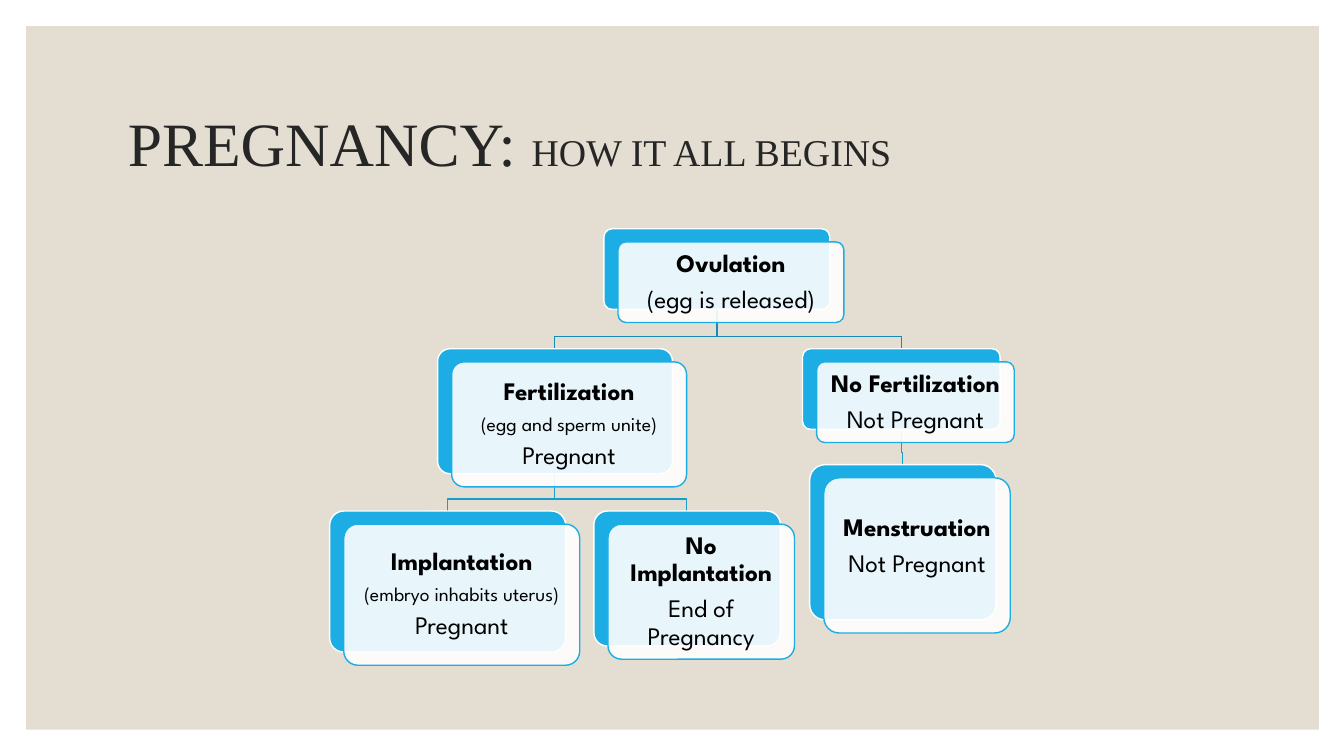
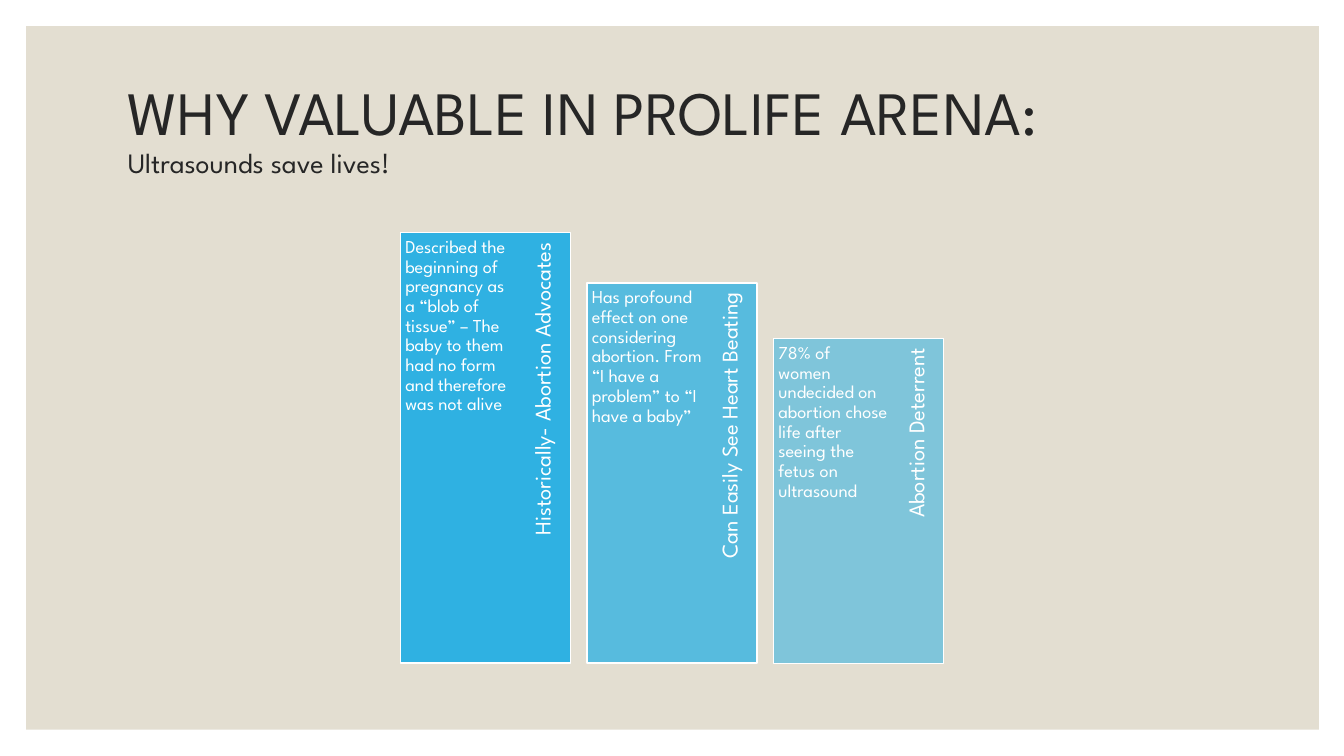
from dataclasses import dataclass

from lxml import etree
from pptx import Presentation
from pptx.dml.color import RGBColor
from pptx.enum.shapes import MSO_SHAPE
from pptx.enum.text import MSO_ANCHOR, PP_ALIGN
from pptx.oxml.ns import qn
from pptx.util import Pt

SCALE = 9144  # EMU in one px, 100 px to the inch
RECT, ROUND = MSO_SHAPE.RECTANGLE, MSO_SHAPE.ROUNDED_RECTANGLE
TOP, MIDDLE = MSO_ANCHOR.TOP, MSO_ANCHOR.MIDDLE
LEFT, CENTER, RIGHT = PP_ALIGN.LEFT, PP_ALIGN.CENTER, PP_ALIGN.RIGHT


@dataclass(frozen=True)
class Theme:
    sand: str = "E3DED1"
    ink: str = "262626"
    black: str = "000000"
    white: str = "FFFFFF"
    blue: str = "1CADE4"
    upper: str = "168BB7"
    lower: str = "199DCF"
    sans: str = "League Spartan"
    serif: str = "Times New Roman"
    title: int = 44
    sub: int = 27
    tag: int = 20
    head: int = 18
    label: int = 16
    note: int = 14
    body: int = 13


T = Theme()

# name: left, top, width, height, lines of (text, size, bold)
CARDS = {
    "ovulation": (599, 227, 224, 80, [
        ("Ovulation", T.head, True),
        ("(egg is released)", T.head, False)]),
    "fertile": (434, 346, 233, 124, [
        ("Fertilization", T.head, True),
        ("(egg and sperm unite)", T.note, False),
        ("Pregnant", T.head, False)]),
    "implant": (327, 507, 234, 140, [
        ("Implantation", T.head, True),
        ("(embryo inhabits uterus)", T.note, False),
        ("Pregnant", T.head, False)]),
    "failed": (589, 507, 185, 134, [
        ("No Implantation", T.head, True),
        ("End of Pregnancy", T.head, False)]),
    "barren": (796, 346, 196, 80, [
        ("No Fertilization", T.head, True),
        ("Not Pregnant", T.head, False)]),
    "menses": (803, 461, 185, 154, [
        ("Menstruation", T.head, True),
        ("Not Pregnant", T.head, False)]),
}
INSETS = {"menses": (3, 3, 3, 21)}
LINKS = [
    ("barren", "menses", T.lower),
    ("ovulation", "barren", T.upper),
    ("fertile", "failed", T.lower),
    ("fertile", "implant", T.lower),
    ("ovulation", "fertile", T.upper),
]

# top, opacity in percent, label, body
BARS = [
    (231, 90, "Historically- Abortion Advocates",
     "Described the beginning of pregnancy as a “blob of tissue” – "
     "The baby to them had no form and therefore was not alive"),
    (281, 70, "Can Easily See Heart Beating",
     "Has profound effect on one considering abortion. "
     "From “I have a problem” to “I have a baby”"),
    (336, 50, "Abortion Deterrent",
     "78% of\vwomen undecided on abortion chose life after "
     "seeing the fetus on ultrasound"),
]


def px(*values):
    return [value * SCALE for value in values]


def rgb(code):
    return RGBColor.from_string(code)


def shape(slide, kind, box, fill, line=None, alpha=100):
    item = slide.shapes.add_shape(kind, *px(*box))
    item.shadow.inherit = False
    item.fill.solid()
    item.fill.fore_color.rgb = rgb(fill)
    if alpha < 100:
        color = item.fill._xPr.find(qn("a:solidFill"))[0]
        etree.SubElement(color, qn("a:alpha")).set("val", str(alpha * 1000))
    if line:
        item.line.color.rgb = rgb(line)
        item.line.width = Pt(1)
    else:
        item.line.fill.background()
    if kind == ROUND:
        item.adjustments[0] = 0.1
    return item


def frame(item, insets, anchor):
    """Set the wrap, anchor and insets (left, top, right, bottom) of a text."""
    text = item.text_frame
    text.word_wrap = True
    text.vertical_anchor = anchor
    (text.margin_left, text.margin_top,
     text.margin_right, text.margin_bottom) = px(*insets)
    return text


def write(text, lines, color, align, face=T.sans, gap=0.35):
    """Fill a frame with lines of (text, size, bold); gap is a share of size."""
    for i, (words, size, bold) in enumerate(lines):
        para = text.add_paragraph() if i else text.paragraphs[0]
        para.text = words
        para.alignment = align
        para.line_spacing = 0.9
        para.space_after = Pt(size * gap)
        font = para.font
        font.name, font.size, font.bold = face, Pt(size), bold
        font.color.rgb = rgb(color)


def base(deck):
    slide = deck.slides.add_slide(deck.slide_layouts[6])
    shape(slide, RECT, (26, 26, 1282, 698), T.sand)
    return slide


def title(slide, lines, face=T.sans, foot=5):
    item = slide.shapes.add_textbox(*px(117, 70, 1100, 150))
    text = frame(item, (10, 5, 10, foot), MIDDLE)
    write(text, lines, T.ink, LEFT, face, 0)
    return text


def link(slide, start, end, color):
    """Draw an elbow from the foot of one card to the top of another."""
    left, top, width, height, _ = CARDS[start]
    x, y = left + width // 2, top + height
    left, top, width, _, _ = CARDS[end]
    goal, bend = left + width // 2, top - 12
    pen = slide.shapes.build_freeform(x, y, scale=SCALE)
    pen.add_line_segments([(x, bend), (goal, bend), (goal, top)], close=False)
    item = pen.convert_to_shape()
    item.shadow.inherit = False
    item.fill.background()
    item.line.color.rgb = rgb(color)
    item.line.width = Pt(1)


def card(slide, name):
    left, top, width, height, lines = CARDS[name]
    shape(slide, ROUND, (left, top, width, height), T.blue, T.white)
    front = shape(slide, ROUND, (left + 14, top + 13, width, height),
                  T.white, T.blue, 90)
    text = frame(front, INSETS.get(name, (7, 7, 7, 7)), MIDDLE)
    write(text, lines, T.black, CENTER)


def bar(slide, left, top, alpha, label, body):
    width, height = 169, 658 - top
    item = shape(slide, RECT, (left, top, width, height),
                 T.blue, T.white, alpha)
    write(frame(item, (5, 5, 54, 5), TOP),
          [(body, T.body, False)], T.white, LEFT)

    # The label turns about its centre, so its long side runs down the bar.
    long, thick = height * 9 // 10, 44
    x, y = left + 143 - long // 2, top + (long - thick) // 2
    side = slide.shapes.add_textbox(*px(x, y, long, thick))
    side.rotation = 270
    write(frame(side, (7, 0, 10, 2), MIDDLE),
          [(label, T.label, False)], T.white, RIGHT)


def begin(deck):
    slide = base(deck)
    text = title(slide, [("PREGNANCY: ", T.title, False)], T.serif)
    run = text.paragraphs[0].add_run()
    run.text = "HOW IT ALL BEGINS"
    run.font.size = Pt(T.sub)
    for start, end, color in LINKS:
        link(slide, start, end, color)
    for name in CARDS:
        card(slide, name)


def value(deck):
    slide = base(deck)
    title(slide, [("WHY VALUABLE IN PROLIFE ARENA:", T.title, False),
                  ("Ultrasounds save lives!", T.tag, False)], foot=35)
    for i, row in enumerate(BARS):
        bar(slide, 397 + 185 * i, *row)


def main():
    deck = Presentation()
    deck.slide_width, deck.slide_height = px(1333, 750)
    begin(deck)
    value(deck)
    deck.save("out.pptx")


if __name__ == "__main__":
    main()
